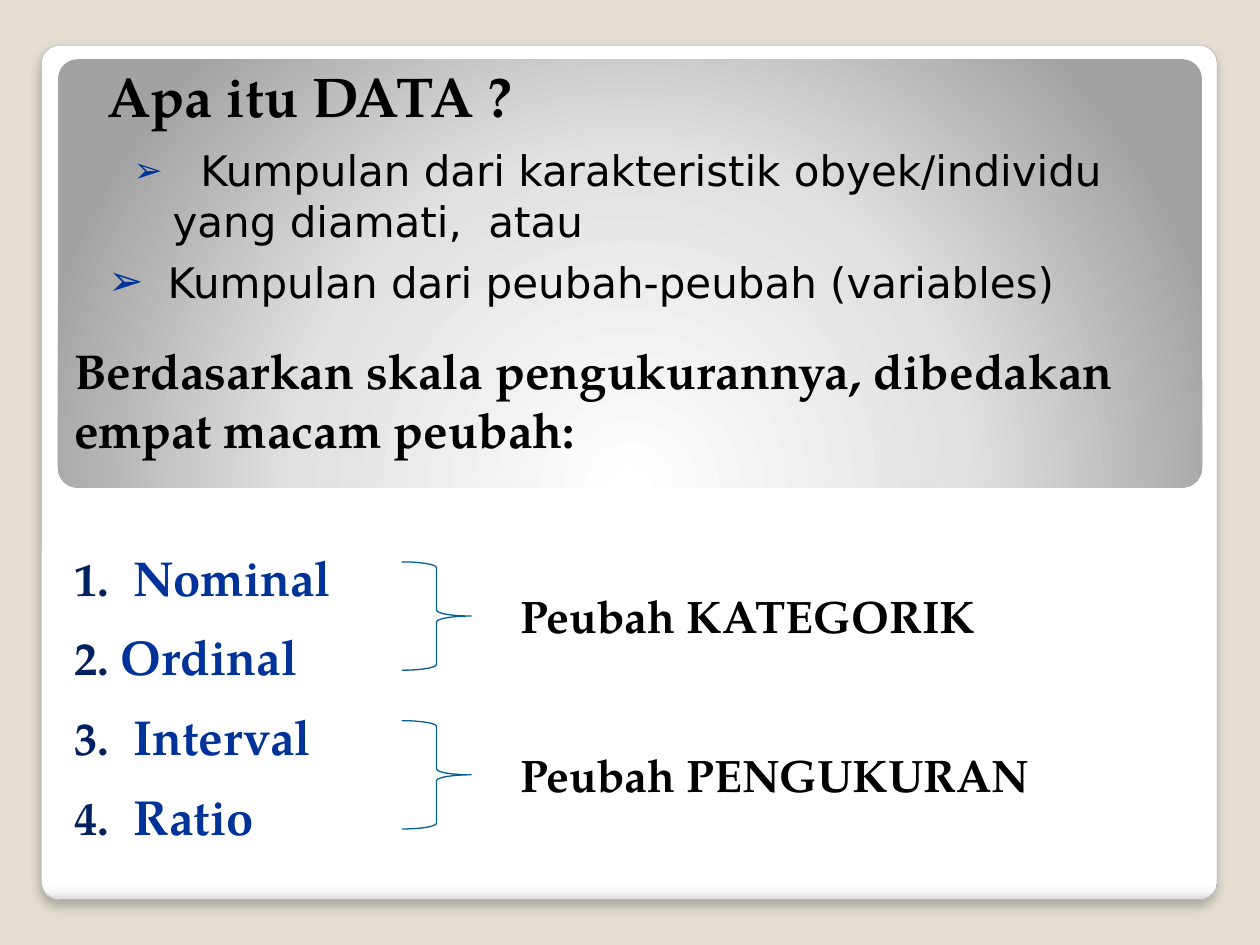
from lxml import etree
from pptx import Presentation
from pptx import util as u
from pptx.dml.color import RGBColor
from pptx.enum import shapes, text
from pptx.oxml import parse_xml
from pptx.oxml.ns import nsdecls, qn

COLORS = {
    "background": "E3DED1", "frame line": "A4A4A4", "black": "000000",
    "blue": "003399", "navy": "002060", "brace": "035E94",
}
SERIF, SANS = "TeX Gyre Pagella", "DejaVu Sans"

TITLE = "Apa itu DATA ?"
# text, left margin and first-line indent in inches, space before, bullet size in percent
DEFINITIONS = [
    ("Kumpulan dari karakteristik obyek/individu", 0.8, -0.53, 0, 83),
    ("yang diamati,  atau", 0.58, 0, 0, None),
    ("Kumpulan dari peubah-peubah (variables)", 0.54, -0.47, 6, 100),
]
INTRO = "Berdasarkan skala pengukurannya, dibedakan empat macam peubah:"
# text, left margin in inches, space before
SCALES = [("Nominal", 0.47, 51), ("Ordinal", 0.37, 12),
          ("Interval", 0.47, 12), ("Ratio", 0.47, 12)]
GROUPS = ["Peubah KATEGORIK", "Peubah PENGUKURAN"]
GROUP_TOP, GROUP_STEP = 4.46, 1.26

FRAME_STOPS = [(0, "FFFFFF"), (98, "FFFFFF"), (99, "F7F7F7"), (100, "DADADA")]
PANEL_STOPS = [(0, "FFFFFF"), (55, "E1E1E1"), (100, "A2A2A2")]
DOWNWARD = '<a:lin ang="5400000" scaled="0"/>'
FROM_BELOW = ('<a:path path="circle"><a:fillToRect l="50000" t="175000" '
              'r="50000" b="-75000"/></a:path>')


def rgb(name):
    return RGBColor.from_string(COLORS[name])


def place(shape, *box):
    shape.left, shape.top, shape.width, shape.height = map(u.Inches, box)


def set_frame(shape, insets, anchor=text.MSO_ANCHOR.TOP):
    frame = shape.text_frame
    frame.word_wrap = True
    frame.auto_size = text.MSO_AUTO_SIZE.NONE
    frame.vertical_anchor = anchor
    (frame.margin_left, frame.margin_top,
     frame.margin_right, frame.margin_bottom) = map(u.Inches, insets)
    return frame


def write(para, words, size, font=SERIF, color="black", bold=True, before=0):
    para.text = words
    para.alignment = text.PP_ALIGN.LEFT
    para.space_before = u.Pt(before)
    span = para.runs[0].font
    span.size, span.name, span.bold = u.Pt(size), font, bold
    span.color.rgb = rgb(color)


def set_bullet(para, margin, indent, mark, color="blue", percent=100):
    """Set the indents and the bullet; mark is (tag, attributes)."""
    props = para._p.get_or_add_pPr()
    props.set("marL", str(u.Inches(margin)))
    props.set("indent", str(u.Inches(indent)))
    tag, attributes = mark
    if tag != "a:buNone":
        tint = etree.SubElement(props, qn("a:buClr"))
        etree.SubElement(tint, qn("a:srgbClr"), val=COLORS[color])
        etree.SubElement(props, qn("a:buSzPct"), val=str(percent * 1000))
    etree.SubElement(props, qn(tag), **attributes)


def add_card(slide, position, box, corner, stops, direction):
    """Add a gradient rounded rectangle behind the text, at a stacking position."""
    card = slide.shapes.add_shape(shapes.MSO_SHAPE.ROUNDED_RECTANGLE,
                                  *map(u.Inches, box))
    card.adjustments[0] = corner
    card.shadow.inherit = False
    card.line.fill.background()
    card.fill.background()
    marks = "".join(f'<a:gs pos="{pos * 1000}"><a:srgbClr val="{color}"/></a:gs>'
                    for pos, color in stops)
    gradient = parse_xml(f'<a:gradFill {nsdecls("a")} rotWithShape="1">'
                         f'<a:gsLst>{marks}</a:gsLst>{direction}</a:gradFill>')
    props = card._element.spPr
    props.replace(props.find(qn("a:noFill")), gradient)
    slide.shapes._spTree.insert(2 + position, card._element)
    return card


def add_soft_shadow(shape):
    effects = shape._element.spPr.find(qn("a:effectLst"))
    effects.append(parse_xml(
        f'<a:outerShdw {nsdecls("a")} blurRad="{u.Pt(6)}" dist="{u.Pt(4)}" '
        'dir="5400000" algn="t" rotWithShape="0"><a:srgbClr val="000000">'
        '<a:alpha val="25000"/></a:srgbClr></a:outerShdw>'))


def add_group(slide, top, label):
    brace = slide.shapes.add_shape(shapes.MSO_SHAPE.RIGHT_BRACE,
                                   *map(u.Inches, (3.19, top, 0.55, 0.86)))
    brace.shadow.inherit = False
    brace.fill.background()
    brace.line.color.rgb = rgb("brace")
    brace.line.width = u.Pt(0.75)
    box = slide.shapes.add_textbox(*map(u.Inches, (4.13, top + 0.16, 4.84, 0.66)))
    write(set_frame(box, (0, 0.05, 0.02, 0.05)).paragraphs[0], label, 26)


def main():
    deck = Presentation()
    deck.slide_width, deck.slide_height = u.Inches(10), u.Inches(7.5)
    slide = deck.slides.add_slide(deck.slide_layouts[3])
    slide.background.fill.solid()
    slide.background.fill.fore_color.rgb = rgb("background")
    title, definitions, scales = slide.placeholders

    frame_card = add_card(slide, 0, (0.33, 0.36, 9.33, 6.78), 0.021,
                          FRAME_STOPS, DOWNWARD)
    frame_card.line.color.rgb = rgb("frame line")
    frame_card.line.width = u.Pt(0.16)
    add_soft_shadow(frame_card)
    add_card(slide, 1, (0.46, 0.47, 9.08, 3.4), 0.046, PANEL_STOPS, FROM_BELOW)

    place(title, 0.75, 0.44, 3.7, 0.64)
    write(set_frame(title, (0.1, 0.05, 0.1, 0.05)).paragraphs[0], TITLE, 32)

    place(definitions, 0.59, 1.15, 8.87, 1.5)
    frame = set_frame(definitions, (0.2, 0, 0.1, 0.05))
    for i, (words, margin, indent, before, percent) in enumerate(DEFINITIONS):
        para = frame.add_paragraph() if i else frame.paragraphs[0]
        write(para, words, 24, SANS, bold=False, before=before)
        mark = ("a:buChar", {"char": "➢"}) if percent else ("a:buNone", {})
        set_bullet(para, margin, indent, mark, percent=percent)

    place(scales, 0.59, 2.65, 8.83, 4.33)
    frame = set_frame(scales, (0, 0.05, 0.02, 0.05))
    write(frame.paragraphs[0], INTRO, 28)
    set_bullet(frame.paragraphs[0], 0, 0, ("a:buNone", {}))
    for words, margin, before in SCALES:
        para = frame.add_paragraph()
        write(para, words, 28, color="blue", before=before)
        set_bullet(para, margin, -margin, ("a:buAutoNum", {"type": "arabicPeriod"}),
                   "navy", 95)

    for i, label in enumerate(GROUPS):
        add_group(slide, GROUP_TOP + i * GROUP_STEP, label)
    deck.save("out.pptx")


if __name__ == "__main__":
    main()
